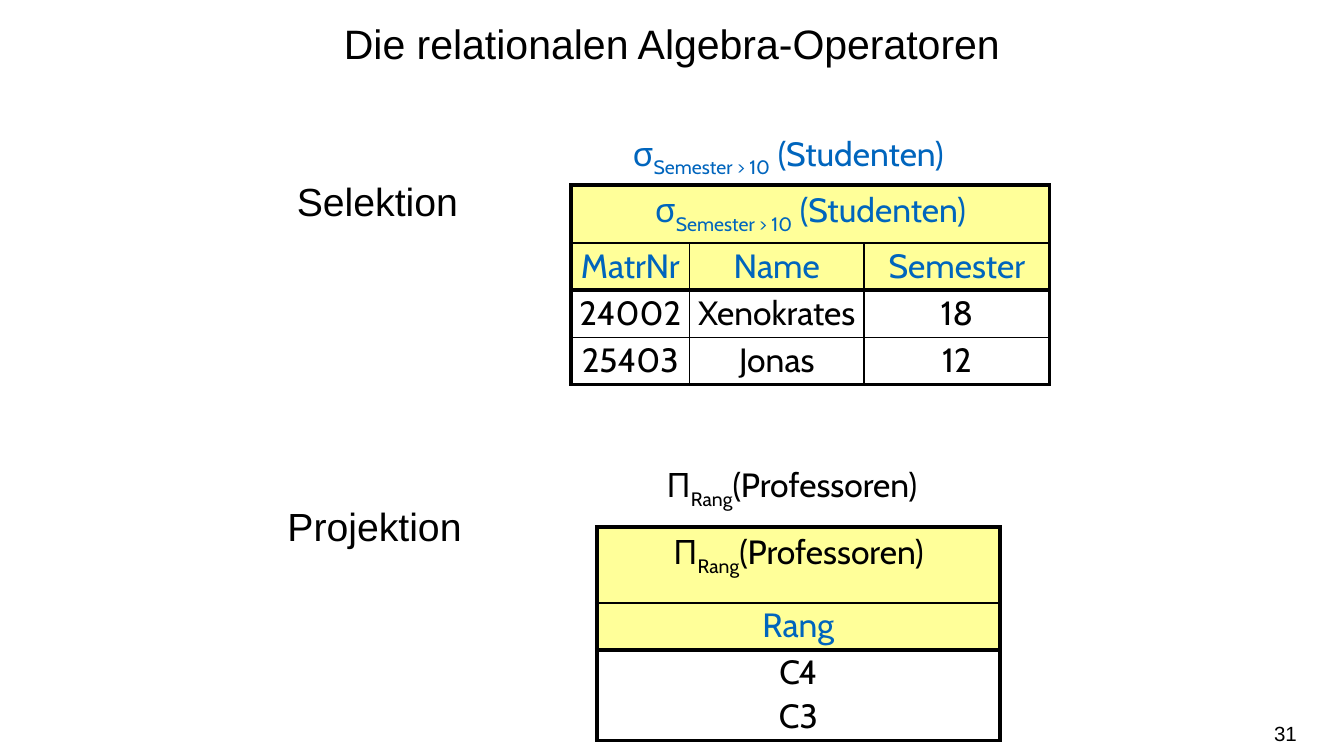
from lxml import etree
from pptx import Presentation
from pptx import util as u
from pptx.dml.color import RGBColor
from pptx.enum import text
from pptx.oxml import ns

BLACK = RGBColor(0x00, 0x00, 0x00)
BLUE = RGBColor(0x00, 0x65, 0xBD)
YELLOW = RGBColor(0xFF, 0xFF, 0x99)
THICK, THIN = 2.25, 1
CENTER, RIGHT = text.PP_ALIGN.CENTER, text.PP_ALIGN.RIGHT

# Grid of 100 columns by 56.25 rows (16:9), square units
UNIT = u.Inches(0.1)
COLS, ROWS = 100, 56.25

SELECTION = [("σ", 0), ("Semester > 10", -25), (" (Studenten)", 0)]
PROJECTION = [("Π", 0), ("Rang", -25), ("(Professoren)", 0)]


def units(*values):
    return [round(v * UNIT) for v in values]


def write(p, parts, size, font, color, **fmt):
    """Fill a paragraph with (words, baseline percent) parts."""
    for name, value in fmt.items():
        setattr(p, name, value)
    for words, baseline in parts:
        r = p.add_run()
        r.text = words
        for name, value in {"size": u.Pt(size), "name": font}.items():
            setattr(r.font, name, value)
        r.font.color.rgb = color
        if baseline:
            r.font._element.set("baseline", str(baseline * 1000))


def label(slide, box, parts, size, font="Arial", color=BLACK, frame=None, **fmt):
    tf = slide.shapes.add_textbox(*units(*box)).text_frame
    for name, value in {"word_wrap": True, **(frame or {})}.items():
        setattr(tf, name, value)
    write(tf.paragraphs[0], parts, size, font, color, **fmt)


def border(cell, widths):
    """Draw left, right, top and bottom lines, widths in points."""
    tcPr = cell._tc.get_or_add_tcPr()
    for side, width in zip("LRTB", widths):
        ln = etree.SubElement(tcPr, ns.qn(f"a:ln{side}"), w=str(u.Pt(width)))
        fill = etree.SubElement(ln, ns.qn("a:solidFill"))
        etree.SubElement(fill, ns.qn("a:srgbClr"), val=str(BLACK))


def relation(slide, box, widths, heights, title, color, rows):
    """Table: merged title row, attribute row, then data rows."""
    table = slide.shapes.add_table(len(heights), len(widths), *units(*box)).table
    table.first_row = table.horz_banding = False
    for lines, attr, sizes in ((table.columns, "width", widths),
                               (table.rows, "height", heights)):
        for line, size in zip(lines, units(*sizes)):
            setattr(line, attr, size)

    last_row, last_col = len(heights) - 1, len(widths) - 1
    for i in range(last_row + 1):
        for j in range(last_col + 1):
            cell = table.cell(i, j)
            # The title row is one merged cell, so both its sides are outer
            edges = (i == 0 or j == 0, i == 0 or j == last_col,
                     i in (0, 2), i in (1, last_row))
            border(cell, [THICK if edge else THIN for edge in edges])
            if i < 2:
                cell.fill.solid()
                cell.fill.fore_color.rgb = YELLOW
            else:
                cell.fill.background()
            for side, margin in zip(("left", "right", "top", "bottom"),
                                    units(0, 0, 0.4, 0.4)):
                setattr(cell, f"margin_{side}", margin)
            if i == 0:
                paragraphs, ink = [title] if j == 0 else [], color
            else:
                paragraphs = [[(line, 0)] for line in rows[i - 1][j].split("\n")]
                ink = BLUE if i == 1 else BLACK
            tf = cell.text_frame
            for k, parts in enumerate(paragraphs):
                p = tf.add_paragraph() if k else tf.paragraphs[0]
                write(p, parts, 18, "Cabin", ink, alignment=CENTER,
                      line_spacing=0.9, space_before=u.Pt(3.6 if k else 0))
    if last_col:
        table.cell(0, 0).merge(table.cell(0, last_col))


def operator(slide, box, name, name_at, formula, formula_at, color,
             table_at, widths, heights, rows):
    """One operator: name on the left, expression above its result table."""
    x, y = box

    def place(at):
        return (x + at[0], y + at[1], *at[2:])

    label(slide, place(name_at), [(name, 0)], 21, frame={"word_wrap": False})
    label(slide, place(formula_at), formula, 18, "Cabin", color,
          frame={"word_wrap": False})
    relation(slide, place((*table_at, sum(widths), sum(heights))),
             widths, heights, formula, color, rows)


def title(slide, box):
    label(slide, box, [("Die relationalen Algebra-Operatoren", 0)], 22,
          alignment=CENTER, line_spacing=1.25)


def page_number(slide, box):
    label(slide, box, [("31", 0)], 11, alignment=RIGHT,
          frame={"margin_left": 0, "margin_right": 0,
                 "vertical_anchor": text.MSO_ANCHOR.MIDDLE})


def main():
    prs = Presentation()
    prs.slide_width, prs.slide_height = units(COLS, ROWS)
    slide = prs.slides.add_slide(prs.slide_layouts[6])

    title(slide, (0, 0, COLS, 9.4))

    # Selection
    operator(slide, (20, 9.4), "Selektion", (1.1, 3.3, 14.1, 4.5),
             SELECTION, (26.1, 0, 28.7, 4), BLUE,
             (22.5, 4.35), (8.8, 13, 13.8), (4.35, 3.4, 3.4, 3.4),
             [("MatrNr", "Name", "Semester"),
              ("24002", "Xenokrates", "18"),
              ("25403", "Jonas", "12")])

    # Projection
    operator(slide, (20, 34), "Projektion", (0.4, 2.9, 15.9, 4.5),
             PROJECTION, (28.6, 0.05, 22.7, 4), BLACK,
             (24.4, 5.2), (30,), (5.65, 3.4, 6.75),
             [("Rang",), ("C4\nC3",)])

    page_number(slide, (74.1, 53.1, 22.4, 3))
    prs.save("out.pptx")


if __name__ == "__main__":
    main()
